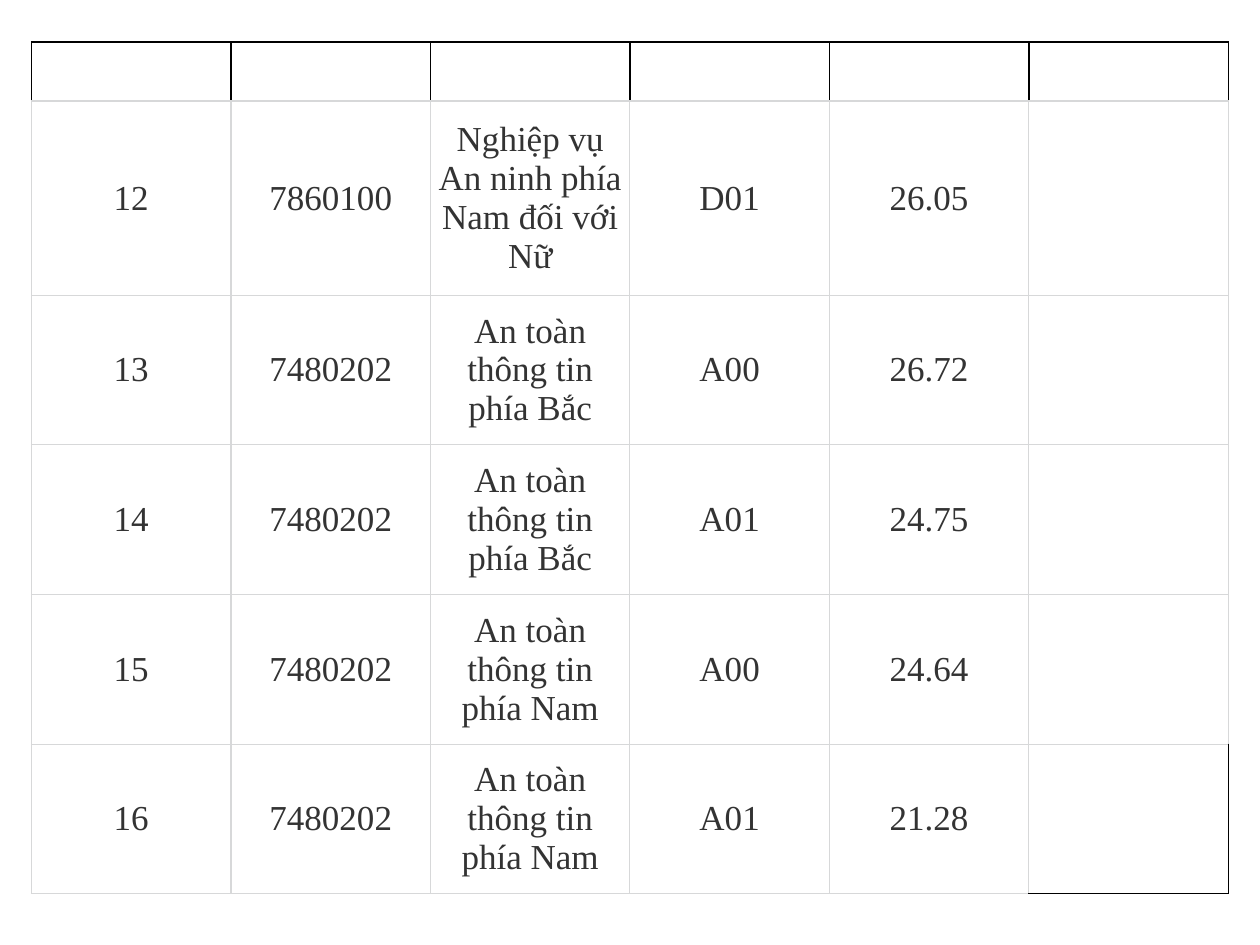
from lxml.etree import SubElement
from pptx import Presentation
from pptx.dml.color import RGBColor
from pptx.enum.text import MSO_ANCHOR, PP_ALIGN
from pptx.oxml.ns import qn
from pptx.util import Emu, Pt

EMU_PER_PX = 9525
COLORS = {"text": "333333", "cell": "FFFFFF", "grid": "D7D8D9", "outline": "000000"}
FONT = {"name": "Times New Roman", "size": Pt(20)}
COLUMN_WIDTH = 152
ROW_HEIGHTS = [45, 148] + [114] * 4
SCORES = [
    ("", "", "", "", "", ""),
    ("12", "7860100", "Nghiệp vụ An ninh phía Nam đối với Nữ", "D01", "26.05", ""),
    ("13", "7480202", "An toàn thông tin phía Bắc", "A00", "26.72", ""),
    ("14", "7480202", "An toàn thông tin phía Bắc", "A01", "24.75", ""),
    ("15", "7480202", "An toàn thông tin phía Nam", "A00", "24.64", ""),
    ("16", "7480202", "An toàn thông tin phía Nam", "A01", "21.28", ""),
]


def px(length):
    """Turn whole pixels into EMU."""
    return Emu(length * EMU_PER_PX)


def set_format(target, values):
    """Set each named attribute on the target."""
    for name, value in values.items():
        setattr(target, name, value)


def draw_borders(cell, outlined):
    """Draw the four cell edges, black on the outlined sides."""
    properties = cell._tc.get_or_add_tcPr()
    for side in "LRTB":
        color, width = ("outline", Pt(1)) if side in outlined else ("grid", Pt(0.75))
        edge = SubElement(properties, qn(f"a:ln{side}"), w=str(width))
        SubElement(SubElement(edge, qn("a:solidFill")), qn("a:srgbClr"), val=COLORS[color])


def fill_cell(cell, text, outlined):
    """Write and format one table cell."""
    margin = px(5)
    set_format(cell, {
        "text": text, "vertical_anchor": MSO_ANCHOR.MIDDLE,
        "margin_left": margin, "margin_right": margin,
        "margin_top": margin, "margin_bottom": margin,
    })
    paragraph = cell.text_frame.paragraphs[0]
    paragraph.alignment = PP_ALIGN.CENTER
    for run in paragraph.runs:
        set_format(run.font, FONT)
        run.font.color.rgb = RGBColor.from_string(COLORS["text"])
    draw_borders(cell, outlined)
    if outlined:
        cell.fill.background()
    else:
        cell.fill.solid()
        cell.fill.fore_color.rgb = RGBColor.from_string(COLORS["cell"])


def add_score_table(slide):
    """Add the table of admission scores."""
    row_count, column_count = len(SCORES), len(SCORES[0])
    frame = slide.shapes.add_table(
        row_count, column_count, px(24), px(32),
        px(COLUMN_WIDTH * column_count), px(sum(ROW_HEIGHTS)))
    scores = frame.table
    set_format(scores, {"first_row": False, "horz_banding": False})
    for column in scores.columns:
        column.width = px(COLUMN_WIDTH)
    outlines = {(0, column): "LRT" for column in range(column_count)}
    outlines[row_count - 1, column_count - 1] = "RB"
    for row, (height, entries) in enumerate(zip(ROW_HEIGHTS, SCORES)):
        scores.rows[row].height = px(height)
        for column, entry in enumerate(entries):
            fill_cell(scores.cell(row, column), entry, outlines.get((row, column), ""))


def main():
    """Build and save the slide."""
    deck = Presentation()
    set_format(deck, {"slide_width": px(960), "slide_height": px(720)})
    add_score_table(deck.slides.add_slide(deck.slide_layouts[6]))
    deck.save("out.pptx")


if __name__ == "__main__":
    main()
